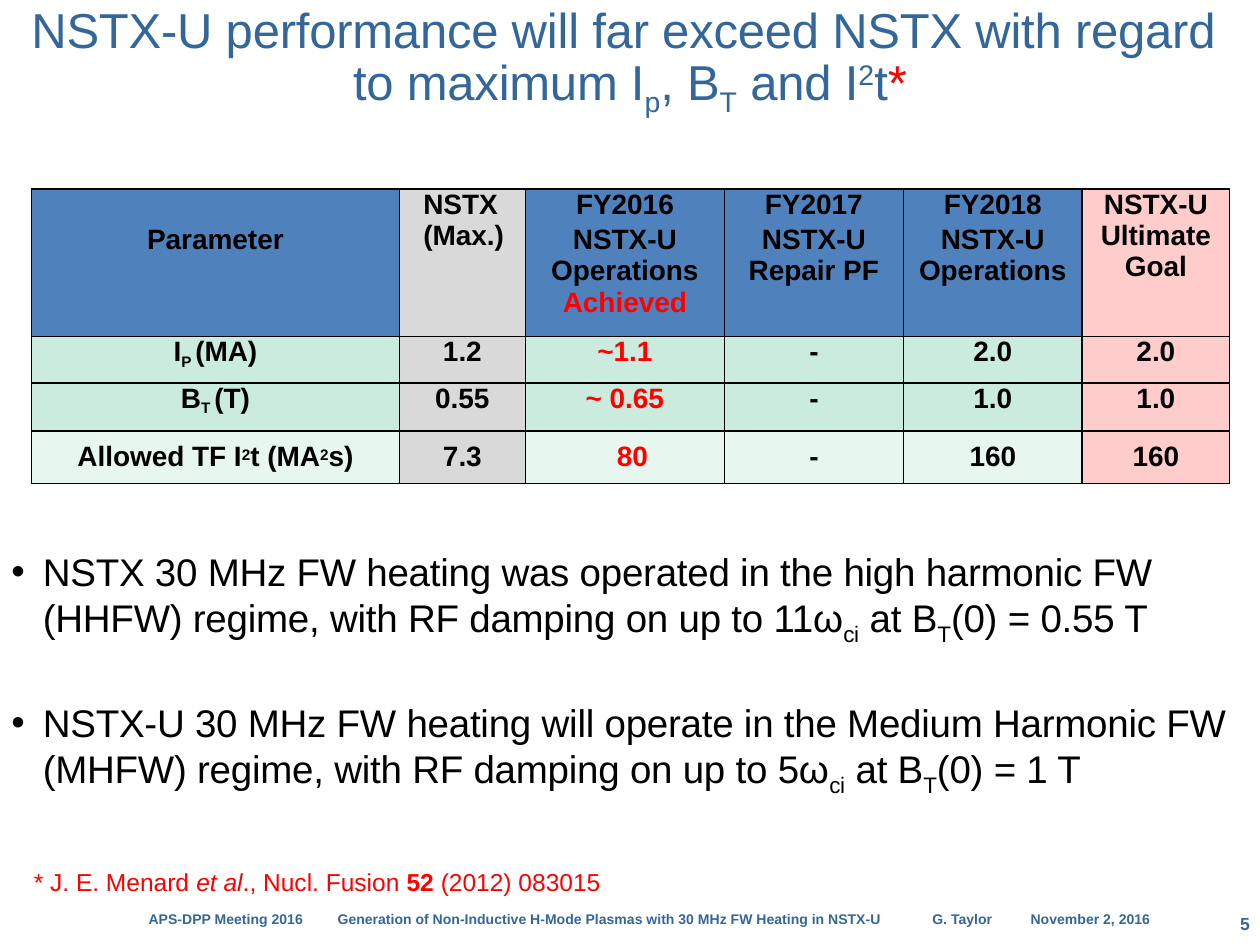
"""Build a slide comparing NSTX and NSTX-U performance and heating regimes."""
from lxml import etree
from pptx import Presentation
from pptx.dml.color import RGBColor
from pptx.enum.text import MSO_ANCHOR, MSO_AUTO_SIZE, PP_ALIGN
from pptx.oxml.ns import qn
from pptx.util import Inches, Pt

CENTER, LEFT, RIGHT = PP_ALIGN.CENTER, PP_ALIGN.LEFT, PP_ALIGN.RIGHT
TOP, MIDDLE = MSO_ANCHOR.TOP, MSO_ANCHOR.MIDDLE
NO_AUTOSIZE = MSO_AUTO_SIZE.NONE
COLORS = {
    "navy": "336699", "black": "000000", "red": "FF0000", "blue": "4F81BC",
    "grey": "D9D9D9", "pink": "FFCCCC", "green": "CAEBDE", "pale": "E7F6EE",
}
SUB, SUPER = {"baseline": "-25000"}, {"baseline": "30000"}
CELL_SUB = {"baseline": "-21000", "size": 15}
CELL_SUPER = {"baseline": "26000", "size": 15}


def write(paragraph, pieces, size, color, bold=False, spc="0"):
    """Add (text, style) pieces to a paragraph; a vertical tab breaks the line."""
    for text, style in pieces:
        if text == "\v":
            paragraph.add_line_break()
            continue
        run = paragraph.add_run()
        run.text = text
        run.font.name = "Arial"
        run.font.size = Pt(style.get("size", size))
        run.font.bold = style.get("bold", bold)
        run.font.italic = style.get("italic", False)
        run.font.color.rgb = RGBColor.from_string(COLORS[style.get("color", color)])
        properties = run._r.get_or_add_rPr()
        properties.set("spc", spc)
        properties.set("baseline", style.get("baseline", "0"))


def set_margins(target, left=0, top=0, right=0, bottom=0):
    """Set the inner margins of a text frame or cell in inches."""
    target.margin_left, target.margin_top = Inches(left), Inches(top)
    target.margin_right, target.margin_bottom = Inches(right), Inches(bottom)


prs = Presentation()
prs.slide_width, prs.slide_height = Inches(10), Inches(7.5)
slide = prs.slides.add_slide(prs.slide_layouts[1])

title, regimes = slide.shapes.title, slide.placeholders[1]
for holder, (left, top, width, height), anchor in (
    (title, (0, -0.02, 10, 0.96), MIDDLE),
    (regimes, (0.08, 4.35, 9.92, 1.9), TOP),
):
    holder.left, holder.top = Inches(left), Inches(top)
    holder.width, holder.height = Inches(width), Inches(height)
    holder.text_frame.auto_size = NO_AUTOSIZE
    holder.text_frame.vertical_anchor = anchor
    set_margins(holder.text_frame)

heading = title.text_frame.paragraphs[0]
heading.alignment = CENTER
heading.line_spacing = Pt(34.4)
write(heading, [
    ("NSTX-U performance will far exceed NSTX with regard ", {}), ("\v", {}),
    ("to maximum I", {}), ("p", SUB), (", B", {}), ("T", SUB), (" and I", {}),
    ("2", SUPER), ("t", {}), ("*", {"color": "red"}),
], 28, "navy", spc="-10")

regime_texts = [
    ("NSTX 30 MHz FW heating was operated in the high harmonic FW (HHFW) regime, "
     "with RF damping on up to 11ω", "(0) = 0.55 T"),
    ("NSTX-U 30 MHz FW heating will operate in the Medium Harmonic FW (MHFW) regime, "
     "with RF damping on up to 5ω", "(0) = 1 T"),
]
for index, (statement, field) in enumerate(regime_texts):
    frame = regimes.text_frame
    bullet = frame.add_paragraph() if index else frame.paragraphs[0]
    bullet.space_before = Pt(30 if index else 0)
    layout = bullet._p.get_or_add_pPr()
    layout.set("marL", str(Inches(0.26)))
    layout.set("indent", str(Inches(-0.25)))
    etree.SubElement(layout, qn("a:buChar")).set("char", "•")
    write(bullet, [(statement, {}), ("ci", SUB), (" at B", {}), ("T", SUB), (field, {})],
          22, "black", spc="-10")

column_widths = [2.92, 1, 1.58, 1.42, 1.42, 1.17]
row_heights = [1.17, 0.37, 0.38, 0.42]
headers = [
    ["Parameter"], ["NSTX", "(Max.)"],
    ["FY2016", "NSTX-U", "Operations", "Achieved"],
    ["FY2017", "NSTX-U", "Repair PF"],
    ["FY2018", "NSTX-U", "Operations"],
    ["NSTX-U", "Ultimate Goal"],
]
parameters = [
    [("I", {}), ("P ", CELL_SUB), ("(MA)", {})],
    [("B", {}), ("T ", CELL_SUB), ("(T)", {})],
    [("Allowed TF I", {}), ("2", CELL_SUPER), ("t (MA", {}), ("2", CELL_SUPER), ("s)", {})],
]
values = [
    ["1.2", "~1.1", "-", "2.0", "2.0"],
    ["0.55", "~ 0.65", "-", "1.0", "1.0"],
    ["7.3", "80", "-", "160", "160"],
]
row_fills = ["blue", "green", "green", "pale"]
column_fills = {1: "grey", 5: "pink"}
achieved_column = 2

performance = slide.shapes.add_table(
    4, 6, Inches(0.25), Inches(1.5), Inches(9.5), Inches(2.33)).table
performance.first_row = performance.horz_banding = False
for column, width in zip(performance.columns, column_widths):
    column.width = Inches(width)
for row, height in zip(performance.rows, row_heights):
    row.height = Inches(height)

for r in range(4):
    for c in range(6):
        cell = performance.cell(r, c)
        set_margins(cell)
        cell.vertical_anchor = MIDDLE if r == 3 else TOP
        cell.fill.solid()
        cell.fill.fore_color.rgb = RGBColor.from_string(
            COLORS[column_fills.get(c, row_fills[r])])
        if r == 0:
            lines = [[(line, {})] for line in headers[c]]
        elif c == 0:
            lines = [parameters[r - 1]]
        else:
            lines = [[(values[r - 1][c - 1], {})]]
        for index, pieces in enumerate(lines):
            line = cell.text_frame.add_paragraph() if index else cell.text_frame.paragraphs[0]
            line.alignment = LEFT if (r, c) == (0, 1) else CENTER
            if index == 1 and 2 <= c <= 4:
                line.space_before = Pt(2.6)
            is_achieved = c == achieved_column and (r > 0 or index == 3)
            write(line, pieces, 16, "red" if is_achieved else "black", bold=True)
        cell_properties = cell._tc.get_or_add_tcPr()
        for position, side in enumerate(("lnL", "lnR", "lnT", "lnB")):
            border = etree.Element(qn("a:" + side), w=str(Pt(1)))
            border_fill = etree.SubElement(border, qn("a:solidFill"))
            etree.SubElement(border_fill, qn("a:srgbClr")).set("val", COLORS["black"])
            cell_properties.insert(position, border)

performance.cell(0, 0).margin_top = Inches(0.28)
performance.cell(0, 1).margin_left = Inches(0.19)
performance.cell(3, achieved_column).margin_left = Inches(0.12)

citation = slide.shapes.add_textbox(
    Inches(0.17), Inches(6.83), Inches(4.73), Inches(0.34)).text_frame
write(citation.paragraphs[0], [
    ("* J. E. Menard ", {}), ("et al", {"italic": True}), ("., Nucl. Fusion ", {}),
    ("52 ", {"bold": True}), ("(2012) 083015", {}),
], 14, "red")

footer = slide.shapes.add_textbox(
    Inches(1), Inches(7.18), Inches(8.33), Inches(0.24)).text_frame
set_margins(footer, left=0.18, top=0.05, bottom=0.05)
footer_line = footer.paragraphs[0]
tab_stops = etree.SubElement(footer_line._p.get_or_add_pPr(), qn("a:tabLst"))
for stop in (1.5, 6.22, 7):
    etree.SubElement(tab_stops, qn("a:tab"), pos=str(Inches(stop)), algn="l")
footer_parts = [
    "APS-DPP Meeting 2016",
    "Generation of Non-Inductive H-Mode Plasmas with 30 MHz FW Heating in NSTX-U",
    "G. Taylor", "November 2, 2016",
]
write(footer_line, [("\t".join(footer_parts), {})], 8, "navy", bold=True)

page_number = slide.shapes.add_textbox(
    Inches(9.25), Inches(7.2), Inches(0.67), Inches(0.27)).text_frame
set_margins(page_number, top=0.05, bottom=0.05)
page_number.paragraphs[0].alignment = RIGHT
write(page_number.paragraphs[0], [("5", {})], 10, "navy", bold=True)

prs.save("out.pptx")
